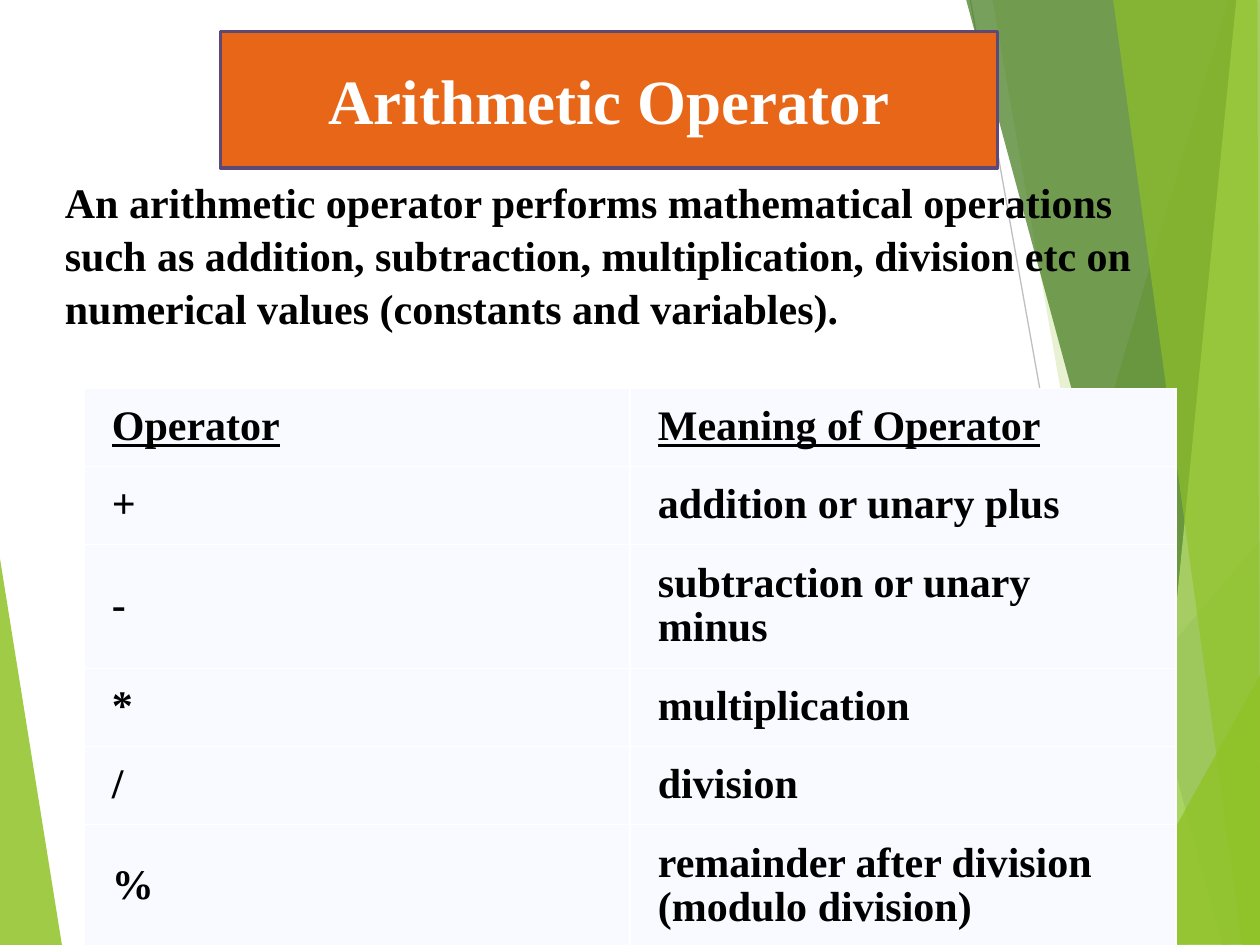
from lxml.etree import SubElement
from pptx import Presentation
from pptx.dml.color import RGBColor
from pptx.enum.shapes import MSO_CONNECTOR
from pptx.enum.text import MSO_ANCHOR, PP_ALIGN
from pptx.oxml.ns import qn
from pptx.util import Pt

FONT = "Times New Roman"
WIDTH, HEIGHT = 720, 540
FACETS = [
    ("90C226", 85, [(-0.5, 316), (35.5, 540.5), (-0.5, 540)]),
    ("90C226", 30, [(702, 0), (543, 540), (721, 540.5), (720.5, 0.5)]),
    ("90C226", 20, [(567, -0.5), (661.5, 540), (720.5, 540), (720.5, -0.5)]),
    ("54A021", 72, [(523, 540), (720, 309), (720.5, 540)]),
    ("3F7819", 70, [(552, -0.5), (698.5, 540), (720.5, 539.5), (720.5, -0.5)]),
    ("C0E474", 70, [(706.5, -0.5), (653, 540), (720.5, 540), (720, -0.5)]),
    ("90C226", 65, [(636, -0.5), (710, 540), (720, 540), (718.5, -0.5)]),
    ("90C226", 80, [(634.5, 540), (720.5, 385), (720.5, 539.5)]),
]
RAYS = [("D9D9D9", (404, 540), (720.5, 329)), ("BFBFBF", (554.5, 0), (651, 540))]
ROWS = [
    ("Operator", "Meaning of Operator"),
    ("+", "addition or unary plus"),
    ("-", "subtraction or unary minus"),
    ("*", "multiplication"),
    ("/", "division"),
    ("%", "remainder after division (modulo division)"),
]


def rgb(value):
    """Turn a hex string into a colour."""
    return RGBColor.from_string(value)


def set_text(tf, text, size, color="000000", spacing=None, underline=None):
    """Write one bold paragraph and return it."""
    tf.text = text
    p = tf.paragraphs[0]
    p.line_spacing = spacing
    font = p.runs[0].font
    font.name, font.size, font.bold, font.underline = FONT, Pt(size), True, underline
    font.color.rgb = rgb(color)
    return p


def place(sp, left, top, width, height):
    """Move and size a shape, in points."""
    sp.left, sp.top, sp.width, sp.height = Pt(left), Pt(top), Pt(width), Pt(height)


def add_facet(s, color, opacity, points):
    """Draw one translucent polygon."""
    start, *rest = [(Pt(x), Pt(y)) for x, y in points]
    builder = s.shapes.build_freeform(*start)
    builder.add_line_segments(rest, close=True)
    sp = builder.convert_to_shape()
    sp.shadow.inherit = False
    sp.fill.solid()
    sp.fill.fore_color.rgb = rgb(color)
    clr = sp.element.spPr.find(".//" + qn("a:srgbClr"))
    SubElement(clr, qn("a:alpha"), val=str(opacity * 1000))
    sp.line.fill.background()


def add_ray(s, color, start, end):
    """Draw one thin straight line."""
    ends = [Pt(v) for v in start + end]
    line = s.shapes.add_connector(MSO_CONNECTOR.STRAIGHT, *ends)
    line.line.color.rgb = rgb(color)
    line.line.width = Pt(0.75)
    SubElement(line.element.spPr, qn("a:effectLst"))


def add_backdrop(s):
    """Draw the faceted backdrop from back to front."""
    add_facet(s, *FACETS[0])
    for ray in RAYS:
        add_ray(s, *ray)
    for facet in FACETS[1:]:
        add_facet(s, *facet)


def add_title(s, text, left, top, width, height):
    """Format the title placeholder as a banner above the backdrop."""
    title = s.shapes.title
    title.element.getparent().append(title.element)
    place(title, left, top, width, height)
    title.fill.solid()
    title.fill.fore_color.rgb = rgb("E76618")
    title.line.color.rgb = rgb("5D4876")
    title.line.width = Pt(2)
    title.text_frame.vertical_anchor = MSO_ANCHOR.MIDDLE
    set_text(title.text_frame, text, 36, "FFFFFF").alignment = PP_ALIGN.CENTER


def add_intro(s, text, left, top, width, height):
    """Add the introductory paragraph."""
    box = s.shapes.add_textbox(Pt(left), Pt(top), Pt(width), Pt(height))
    box.text_frame.word_wrap = True
    set_text(box.text_frame, text, 24, spacing=1.05)


def add_operators(s, rows, left, top, width, row_height, last_height):
    """Add the table of operators and their meanings."""
    height = row_height * (len(rows) - 1) + last_height
    frame = s.shapes.add_table(len(rows), 2, Pt(left), Pt(top), Pt(width), Pt(height))
    table = frame.table
    table.first_row = table.horz_banding = False
    for i, row in enumerate(rows):
        table.rows[i].height = Pt(last_height if i == len(rows) - 1 else row_height)
        for j, text in enumerate(row):
            cell = table.cell(i, j)
            cell.fill.solid()
            cell.fill.fore_color.rgb = rgb("F8FAFF")
            cell.vertical_anchor = MSO_ANCHOR.MIDDLE
            cell.margin_left = cell.margin_right = Pt(16)
            cell.margin_top = cell.margin_bottom = Pt(8)
            set_text(cell.text_frame, text, 24, spacing=0.95, underline=i == 0)


def main():
    """Build the slide and save it."""
    prs = Presentation()
    prs.slide_width, prs.slide_height = Pt(WIDTH), Pt(HEIGHT)
    s = prs.slides.add_slide(prs.slide_layouts[5])
    add_backdrop(s)
    add_title(s, "Arithmetic Operator", 126, 18, 444, 78)
    add_intro(
        s,
        "An arithmetic operator performs mathematical operations such as addition, "
        "subtraction, multiplication, division etc on numerical values "
        "(constants and variables).",
        30, 96, 660, 101.5,
    )
    add_operators(s, ROWS, 48, 222, 624, 44.64, 69)
    prs.save("out.pptx")


if __name__ == "__main__":
    main()
